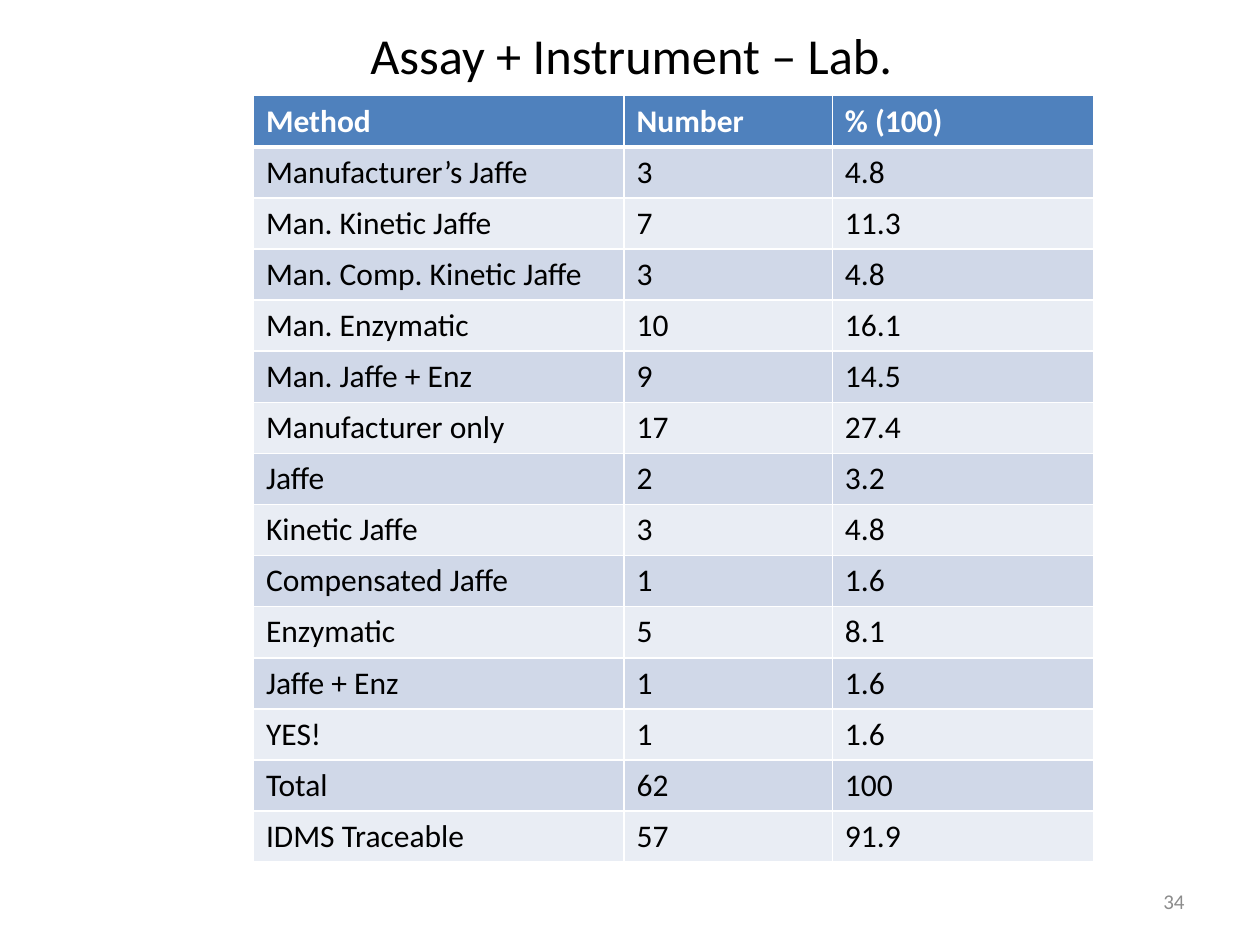
from lxml.etree import SubElement
from pptx import Presentation
from pptx.dml.color import RGBColor
from pptx.enum.text import MSO_ANCHOR as Anchor, PP_ALIGN as Align
from pptx.oxml.ns import qn
from pptx.util import Cm, Pt

FONT = "Calibri"
COLORS = {
    "text": "000000",
    "page_number": "8C8C8C",
    "white": "FFFFFF",
    "header": "4F81BD",
    "odd_row": "D0D8E8",
    "even_row": "E9EDF4",
}

HEADINGS = ("Method", "Number", "% (100)")
RESULTS = [
    ("Manufacturer’s Jaffe", "3", "4.8"),
    ("Man. Kinetic Jaffe", "7", "11.3"),
    ("Man. Comp. Kinetic Jaffe", "3", "4.8"),
    ("Man. Enzymatic", "10", "16.1"),
    ("Man. Jaffe + Enz", "9", "14.5"),
    ("Manufacturer only", "17", "27.4"),
    ("Jaffe", "2", "3.2"),
    ("Kinetic Jaffe", "3", "4.8"),
    ("Compensated Jaffe", "1", "1.6"),
    ("Enzymatic", "5", "8.1"),
    ("Jaffe + Enz", "1", "1.6"),
    ("YES!", "1", "1.6"),
    ("Total", "62", "100"),
    ("IDMS Traceable", "57", "91.9"),
]
COLUMN_WIDTHS = (7.47, 4.2, 5.26)
ROW_HEIGHT = 1.03


def color(name):
    return RGBColor.from_string(COLORS[name])


def add_span(para, text, size, color_name, bold=False):
    span = para.add_run()
    span.text = text
    span.font.name = FONT
    span.font.size = Pt(size)
    span.font.bold = bold
    span.font.color.rgb = color(color_name)


def add_text(page, text, left, top, width, height, size, color_name, align):
    box = page.shapes.add_textbox(Cm(left), Cm(top), Cm(width), Cm(height))
    frame = box.text_frame
    frame.word_wrap = True
    frame.vertical_anchor = Anchor.MIDDLE
    para = frame.paragraphs[0]
    para.alignment = align
    add_span(para, text, size, color_name)


def set_borders(cell, top, bottom):
    """Draw white cell borders; the widths are in points."""
    properties = cell._tc.get_or_add_tcPr()
    for side, width in (("L", 1), ("R", 1), ("T", top), ("B", bottom)):
        line = SubElement(properties, qn(f"a:ln{side}"), w=str(Pt(width)))
        fill = SubElement(line, qn("a:solidFill"))
        SubElement(fill, qn("a:srgbClr"), val=COLORS["white"])


def fill_cell(cell, text, row_index):
    is_header = row_index == 0
    # The rule under the header is thicker than the others
    set_borders(cell, top=3 if row_index == 1 else 1, bottom=3 if is_header else 1)
    band = "header" if is_header else "odd_row" if row_index % 2 else "even_row"
    cell.fill.solid()
    cell.fill.fore_color.rgb = color(band)
    add_span(cell.text_frame.paragraphs[0], text, 18,
             "white" if is_header else "text", bold=is_header)


def add_results_table(page, left, top):
    rows = [HEADINGS, *RESULTS]
    table = page.shapes.add_table(
        len(rows), len(HEADINGS), Cm(left), Cm(top),
        Cm(sum(COLUMN_WIDTHS)), Cm(ROW_HEIGHT * len(rows))).table
    for column, width in zip(table.columns, COLUMN_WIDTHS):
        column.width = Cm(width)
    for row_index, values in enumerate(rows):
        table.rows[row_index].height = Cm(ROW_HEIGHT)
        for column_index, text in enumerate(values):
            fill_cell(table.cell(row_index, column_index), text, row_index)


def main():
    deck = Presentation()
    deck.slide_width, deck.slide_height = Cm(25.4), Cm(19.05)
    page = deck.slides.add_slide(deck.slide_layouts[6])

    # Title
    add_text(page, "Assay + Instrument – Lab.", 1.3, 0.33, 22.86, 1.55,
             28.8, "text", Align.CENTER)
    # Page number
    add_text(page, "34", 18.21, 17.65, 5.92, 1.02,
             12, "page_number", Align.RIGHT)
    # Methods and their shares
    add_results_table(page, 5.11, 1.93)

    deck.save("out.pptx")


if __name__ == "__main__":
    main()
